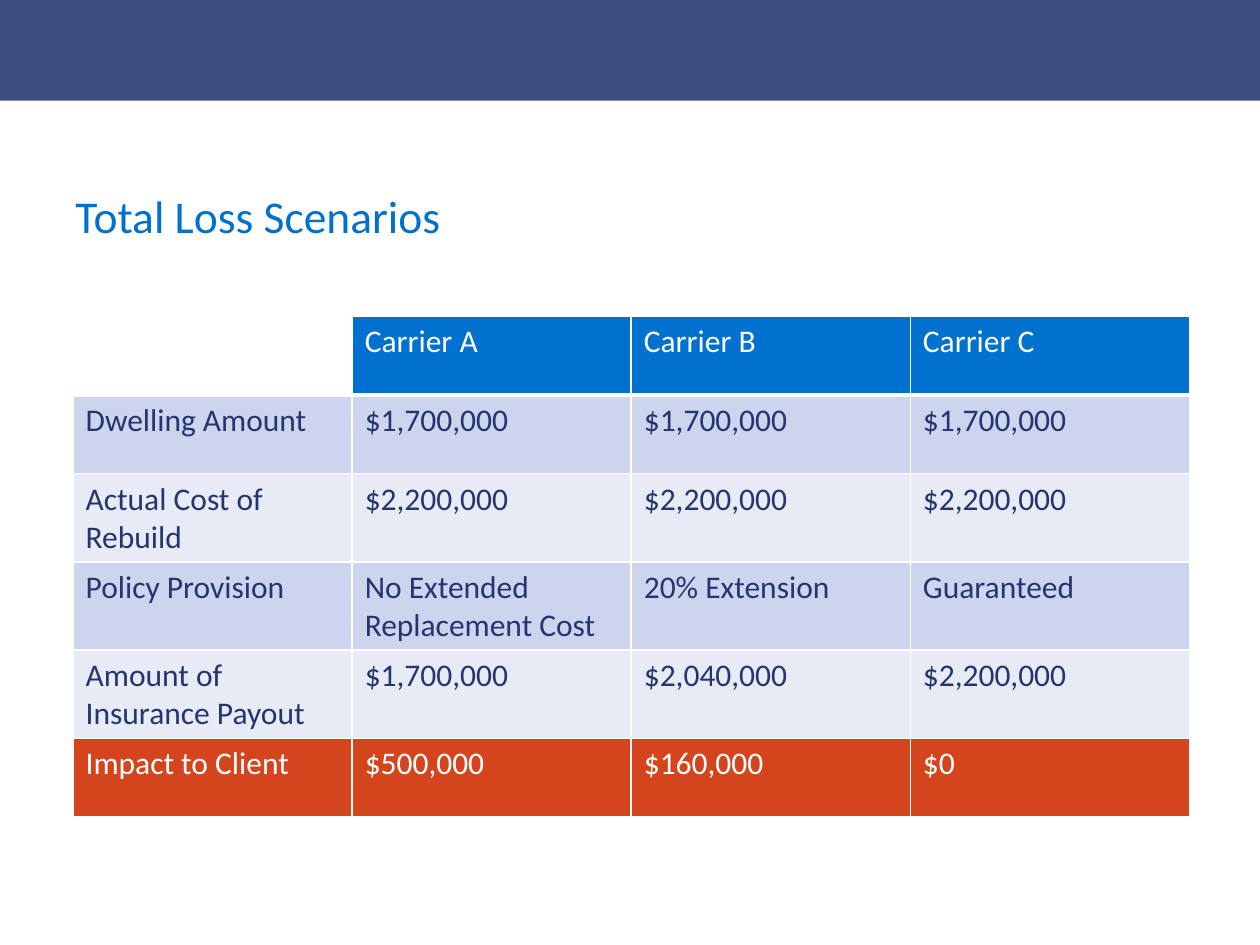
from lxml import etree
from pptx import Presentation, util as u
from pptx.dml.color import RGBColor
from pptx.enum import shapes, text
from pptx.oxml.ns import qn

WIDE, HIGH = u.Inches(10), u.Inches(7.5)
NAVY, BLUE, RED, WHITE = "24356F", "0071CE", "D4451D", "FFFFFF"
DARK, PALE = "CCD5ED", "E7EBF6"

# Each row: fill, text colour, cell texts
ROWS = [
    (BLUE, WHITE, ["", "Carrier A", "Carrier B", "Carrier C"]),
    (DARK, NAVY, ["Dwelling Amount"] + ["$1,700,000"] * 3),
    (PALE, NAVY, ["Actual Cost of Rebuild"] + ["$2,200,000"] * 3),
    (DARK, NAVY, ["Policy Provision", "No Extended Replacement Cost",
                  "20% Extension", "Guaranteed"]),
    (PALE, NAVY, ["Amount of Insurance Payout", "$1,700,000",
                  "$2,040,000", "$2,200,000"]),
    (RED, WHITE, ["Impact to Client", "$500,000", "$160,000", "$0"]),
]


def color(code):
    return RGBColor.from_string(code)


def paint(fill, code):
    fill.solid()
    fill.fore_color.rgb = color(code)


def write(frame, words, size, code):
    para = frame.paragraphs[0]
    para.text = words
    style = {"name": "Calibri", "size": u.Pt(size), "bold": False}
    for key, value in style.items():
        setattr(para.font, key, value)
    para.font.color.rgb = color(code)


def add_band(slide, share, code, alpha):
    band = slide.shapes.add_shape(
        shapes.MSO_SHAPE.RECTANGLE, 0, 0, WIDE, int(HIGH * share))
    band.shadow.inherit = False
    band.line.fill.background()
    paint(band.fill, code)
    tint = band.fill._xPr.find(".//" + qn("a:srgbClr"))
    etree.SubElement(tint, qn("a:alpha"), val=str(alpha * 1000))


def add_title(slide, words):
    box = slide.shapes.add_textbox(
        int(WIDE * 0.05), int(HIGH * 0.19), int(WIDE * 0.665), int(HIGH * 0.075))
    frame = box.text_frame
    style = {"word_wrap": True, "vertical_anchor": text.MSO_ANCHOR.MIDDLE}
    for key, value in style.items():
        setattr(frame, key, value)
    write(frame, words, 26, BLUE)


def edge(cell, base):
    # Borders come before the fill in the cell properties
    props = cell._tc.get_or_add_tcPr()
    widths = {"lnL": 1, "lnR": 1, "lnT": 1, "lnB": base}
    for spot, (tag, width) in enumerate(widths.items()):
        line = etree.Element(qn("a:" + tag), w=str(u.Pt(width)))
        fill = etree.SubElement(line, qn("a:solidFill"))
        etree.SubElement(fill, qn("a:srgbClr"), val=WHITE)
        props.insert(spot, line)


def add_grid(slide, rows):
    count = len(rows[0][2])
    frame = slide.shapes.add_table(
        len(rows), count, u.Inches(0.58), u.Inches(2.51),
        u.Inches(8.86), u.Inches(0.625 * len(rows)))
    table = frame.table
    for r, (back, ink, words) in enumerate(rows):
        for c, word in enumerate(words):
            cell = table.cell(r, c)
            paint(cell.fill, back if word else WHITE)
            write(cell.text_frame, word, 18, ink)
            edge(cell, 3 if r == 0 else 1)


def main():
    deck = Presentation()
    deck.slide_width, deck.slide_height = WIDE, HIGH
    slide = deck.slides.add_slide(deck.slide_layouts[6])

    # Header band and title
    add_band(slide, 0.8 / 7.5, NAVY, 88)
    add_title(slide, "Total Loss Scenarios")

    # Carrier comparison
    add_grid(slide, ROWS)
    deck.save("out.pptx")


if __name__ == "__main__":
    main()
